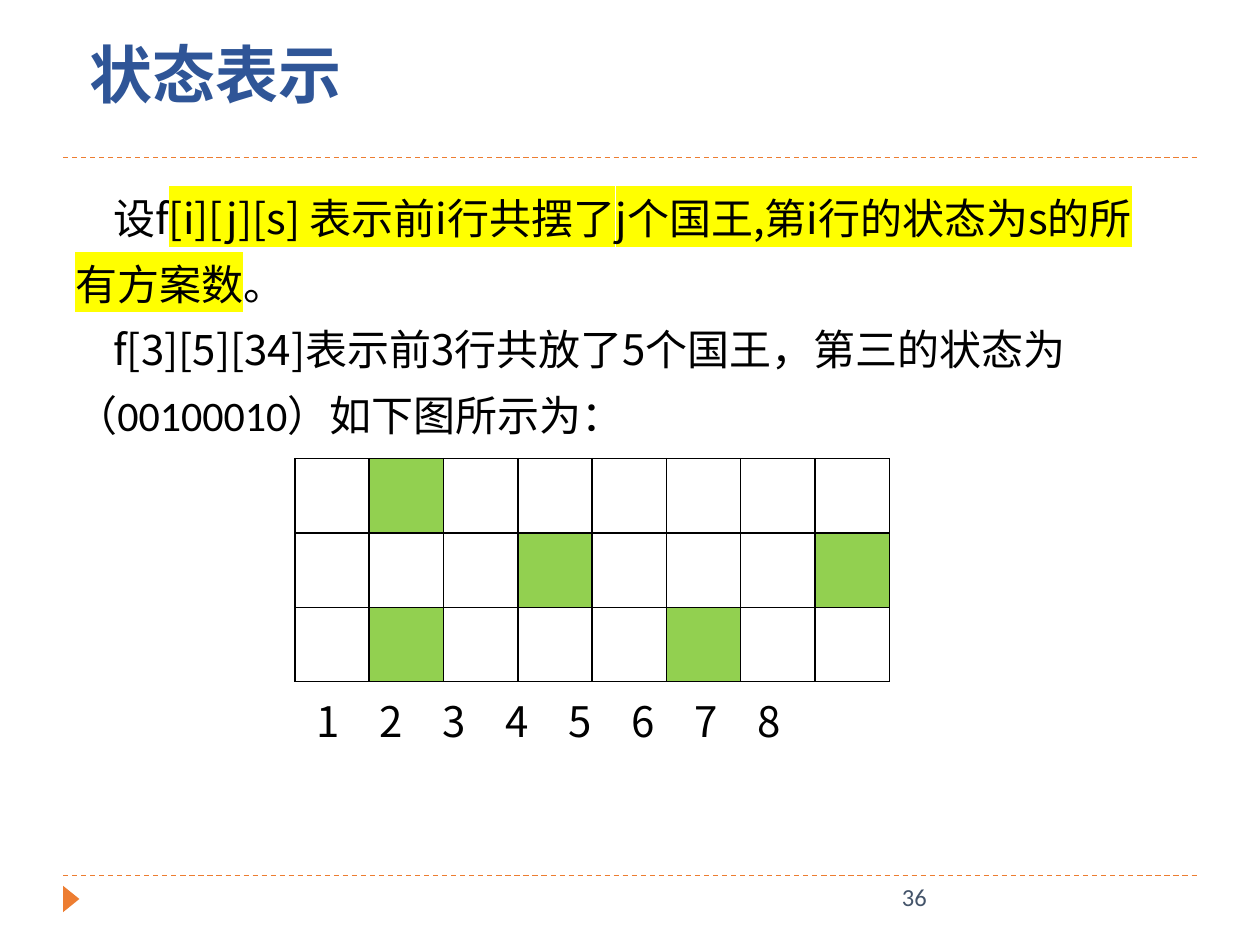
from lxml import etree
from pptx import Presentation
from pptx.dml.color import RGBColor
from pptx.enum.dml import MSO_LINE
from pptx.enum.shapes import MSO_CONNECTOR, MSO_SHAPE
from pptx.enum.text import MSO_ANCHOR
from pptx.oxml.ns import qn
from pptx.util import Inches, Pt

COLORS = {name: RGBColor.from_string(value) for name, value in {
    "orange": "ED7D31", "slate": "44546A", "blue": "2F5597", "black": "000000",
    "white": "FFFFFF", "green": "92D050", "yellow": "FFFF00"}.items()}
CJK = "Noto Sans CJK SC"
LATIN = "Calibri"


def add_text_box(left, top, width, height, anchor=MSO_ANCHOR.TOP, wrap=True):
    frame = slide.shapes.add_textbox(
        Inches(left), Inches(top), Inches(width), Inches(height)).text_frame
    frame.word_wrap = wrap
    frame.vertical_anchor = anchor
    return frame


def add_run(paragraph, text, color, highlight=None, **font_values):
    run = paragraph.add_run()
    run.text = text
    run.font.color.rgb = COLORS[color]
    properties = run.font._element
    if highlight:
        mark = etree.SubElement(properties, qn("a:highlight"))
        etree.SubElement(mark, qn("a:srgbClr"), val=str(COLORS[highlight]))
    for name, value in font_values.items():
        setattr(run.font, name, value)
    etree.SubElement(properties, qn("a:ea"), typeface=CJK)


presentation = Presentation()
presentation.slide_width = Inches(10)
presentation.slide_height = Inches(7.5)
slide = presentation.slides.add_slide(presentation.slide_layouts[6])

# Dashed rules and page marker
for y in (6.95, 1.25):
    rule = slide.shapes.add_connector(
        MSO_CONNECTOR.STRAIGHT, Inches(0.5), Inches(y), Inches(9.5), Inches(y))
    rule.line.color.rgb = COLORS["orange"]
    rule.line.width = Pt(0.75)
    rule.line.dash_style = MSO_LINE.DASH
    etree.SubElement(rule._element.spPr, qn("a:effectLst"))

marker = slide.shapes.add_shape(
    MSO_SHAPE.ISOSCELES_TRIANGLE, Inches(0.46), Inches(7.07), Inches(0.21), Inches(0.13))
marker.rotation = 90
marker.shadow.inherit = False
marker.fill.solid()
marker.fill.fore_color.rgb = COLORS["orange"]
marker.line.fill.background()

page_number = add_text_box(7.06, 6.95, 2.25, 0.4)
add_run(page_number.paragraphs[0], "36", "slate", size=Pt(14), name=LATIN)

title = add_text_box(0.61, 0.23, 2.2, 0.71, MSO_ANCHOR.MIDDLE, wrap=False)
add_run(title.paragraphs[0], "状态表示", "blue", size=Pt(36), name=LATIN, bold=True)

# Board with the kings' squares in green
ROWS, COLUMNS, CELL = 3, 8, Inches(0.59)
KINGS = {(0, 1), (1, 3), (1, 7), (2, 1), (2, 5)}
board = slide.shapes.add_table(
    ROWS, COLUMNS, Inches(2.34), Inches(3.64), CELL * COLUMNS, CELL * ROWS).table
board.first_row = False
board.horz_banding = False
for line in [*board.rows]:
    line.height = CELL
for line in [*board.columns]:
    line.width = CELL
for row in range(ROWS):
    for column in range(COLUMNS):
        cell = board.cell(row, column)
        properties = cell._tc.get_or_add_tcPr()
        for side in ("lnL", "lnR", "lnT", "lnB"):
            border = etree.SubElement(properties, qn(f"a:{side}"), w=str(Pt(1)))
            border_fill = etree.SubElement(border, qn("a:solidFill"))
            etree.SubElement(border_fill, qn("a:srgbClr"), val=str(COLORS["black"]))
        cell.fill.solid()
        cell.fill.fore_color.rgb = COLORS["green" if (row, column) in KINGS else "white"]

# Column numbers, set on tab stops
body_font = {"size": Pt(24), "name": CJK}
labels = add_text_box(2.34, 5.47, 4.88, 0.5, MSO_ANCHOR.MIDDLE).paragraphs[0]
label_properties = labels._p.get_or_add_pPr()
label_properties.set("marL", str(Inches(0.07)))
label_properties.set("indent", "0")
tab_list = etree.SubElement(label_properties, qn("a:tabLst"))
for position in (0.4, 0.81, 1.14, 1.55, 1.96, 2.3, 2.64):
    etree.SubElement(tab_list, qn("a:tab"), pos=str(Inches(position)), algn="l")
add_run(labels, "\t".join(str(number) for number in range(1, COLUMNS + 1)),
        "black", **body_font)

# Explanation
EXPLANATION = [
    [("设f", {}),
     ("[i][j][s] 表示前i行共摆了j个国王,第i行的状态为s的所有方案数", {"highlight": "yellow"}),
     ("。", {})],
    [("f[3][5][34]表示前3行共放了5个国王，第三的状态为（", {}),
     ("00100010", {"name": LATIN}),
     ("）如下图所示为：", {})],
]
explanation = add_text_box(0.5, 1.36, 8.81, 2.2)
for index, runs in enumerate(EXPLANATION):
    paragraph = explanation.add_paragraph() if index else explanation.paragraphs[0]
    paragraph.line_spacing = Pt(37.5)
    paragraph._p.get_or_add_pPr().set("indent", str(Inches(0.3)))
    for text, values in runs:
        add_run(paragraph, text, "black", **{**body_font, **values})

presentation.save("out.pptx")
